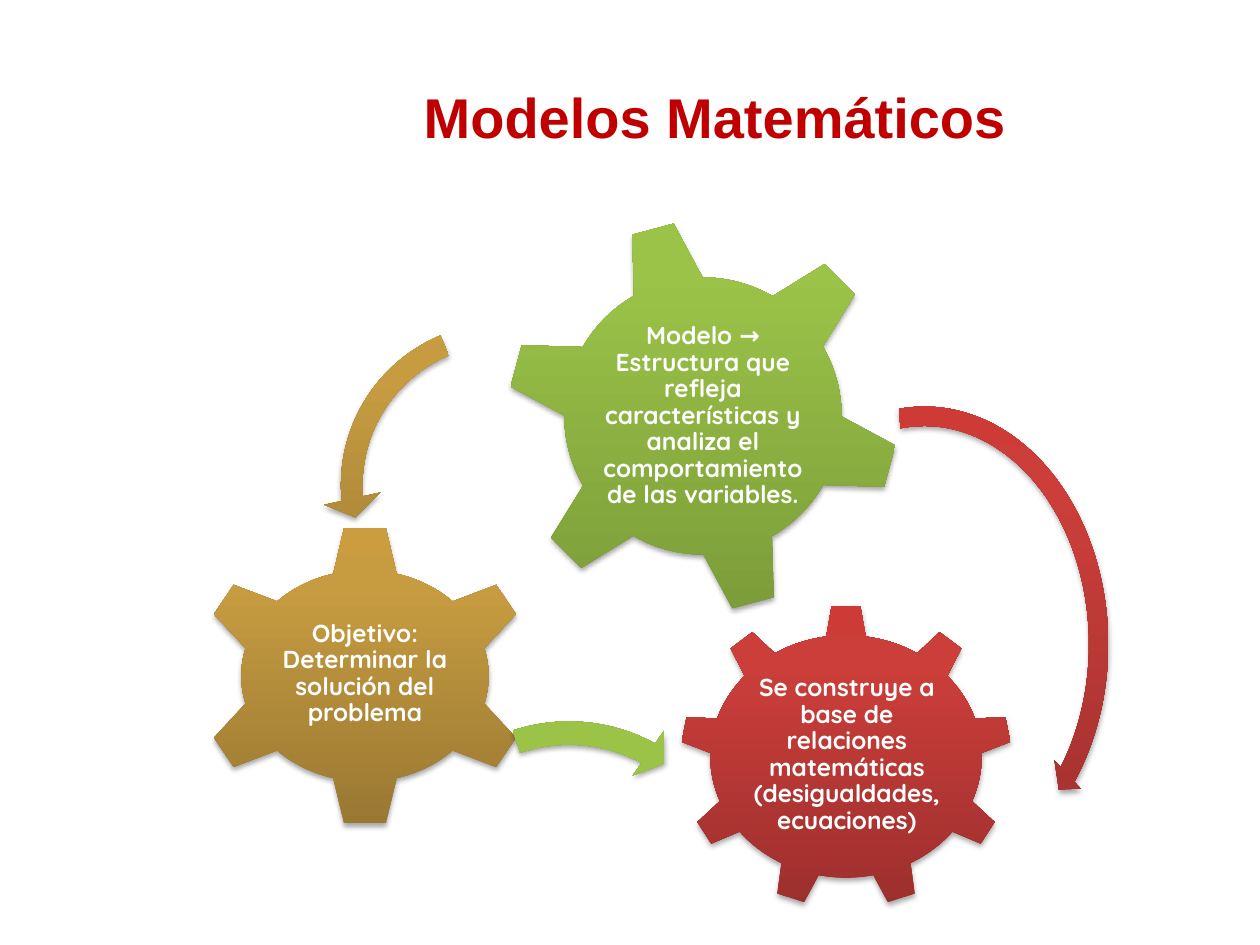
from dataclasses import dataclass

from pptx import Presentation
from pptx import util as u
from pptx.dml.color import RGBColor
from pptx.enum import shapes, text
from pptx.oxml import parse_xml
from pptx.oxml.ns import nsdecls

PX = u.Inches(1) // 126
KIND = shapes.MSO_SHAPE
Box = tuple[int, int, int, int]

HEX = {"title": "C00000", "text": "FFFFFF", "shade": "000000"}
TONES = {
    "red": {0: "9C2F2D", 80: "CB3E3A", 100: "CE3B37"},
    "gold": {0: "997832", 80: "C79C41", 100: "CB9D3F"},
    "green": {0: "779737", 80: "9BC348", 100: "9DC746"},
}


@dataclass
class Part:
    kind: KIND
    box: Box
    tone: str
    turn: float = 0
    adj: tuple[float, ...] = ()


@dataclass
class Label:
    words: str
    box: Box
    font: str = "Quicksand"
    size: int = 14
    color: str = "text"
    inset: int = 3
    lines: float = 0.9
    after: int = 5


GEARS = [
    (Part(KIND.GEAR_9, (680, 605, 332, 303), "red"),
     Label("Se construye a base de relaciones matemáticas "
           "(desigualdades, ecuaciones)", (746, 677, 202, 156))),
    (Part(KIND.GEAR_6, (196, 525, 338, 302), "gold"),
     Label("Objetivo: Determinar la solución del problema",
           (277, 600, 176, 148))),
    (Part(KIND.GEAR_6, (505, 218, 396, 396), "green", 345),
     Label("Modelo → Estructura que refleja características y analiza "
           "el comportamiento de las variables.", (592, 305, 222, 223))),
]
ARROWS = [
    Part(KIND.CIRCULAR_ARROW, (731, 397, 387, 495), "red",
         adj=(0.05, 2.99, 25.34, 158.23, 0.05)),
    Part(KIND.LEFT_CIRCULAR_ARROW, (323, 305, 360, 360), "gold",
         adj=(0.06, 4.3, 104.89, 148.38, 0.08)),
    Part(KIND.CIRCULAR_ARROW, (375, 706, 388, 388), "green", 76.5,
         (0.06, 3.94, 133.14, 105.08, 0.07)),
]
TITLE = Label("Modelos Matemáticos", (233, 38, 964, 157), "Arial", 32,
              "title", 12, 1, 0)


def scale(box: Box) -> list[int]:
    return [n * PX for n in box]


def shade(shape, tone: str) -> None:
    """Give the shape a vertical gradient and a soft shadow below."""
    stops = "".join(
        f'<a:gs pos="{pos * 1000}"><a:srgbClr val="{color}"/></a:gs>'
        for pos, color in TONES[tone].items())
    props = shape.element.spPr
    shape.line.fill.background()
    props.insert(2, parse_xml(
        f'<a:gradFill {nsdecls("a")} rotWithShape="0"><a:gsLst>{stops}'
        '</a:gsLst><a:lin ang="16200000" scaled="0"/></a:gradFill>'))
    props.append(parse_xml(
        f'<a:effectLst {nsdecls("a")}><a:outerShdw blurRad="{u.Pt(3.1)}" '
        f'dist="{u.Pt(1.8)}" dir="5400000" rotWithShape="0">'
        f'<a:srgbClr val="{HEX["shade"]}"><a:alpha val="35000"/></a:srgbClr>'
        '</a:outerShdw></a:effectLst>'))


def draw(slide, part: Part) -> None:
    shape = slide.shapes.add_shape(part.kind, *scale(part.box))
    shape.rotation = part.turn
    for i, value in enumerate(part.adj):
        shape.adjustments[i] = value
    shade(shape, part.tone)


def write(slide, label: Label) -> None:
    frame = slide.shapes.add_textbox(*scale(label.box)).text_frame
    frame.word_wrap = True
    frame.vertical_anchor = text.MSO_ANCHOR.MIDDLE
    frame.margin_left = frame.margin_right = label.inset * PX
    frame.margin_top = frame.margin_bottom = min(label.inset, 6) * PX
    para = frame.paragraphs[0]
    para.alignment = text.PP_ALIGN.CENTER
    para.line_spacing = label.lines
    para.space_after = u.Pt(label.after)
    run = para.add_run()
    run.text = label.words
    font = run.font
    font.name, font.size, font.bold = label.font, u.Pt(label.size), True
    font.color.rgb = RGBColor.from_string(HEX[label.color])


def main() -> None:
    deck = Presentation()
    deck.slide_width, deck.slide_height = u.Inches(10), u.Inches(7.5)
    slide = deck.slides.add_slide(deck.slide_layouts[6])
    write(slide, TITLE)
    for gear, label in GEARS:
        draw(slide, gear)
        write(slide, label)
    for arrow in ARROWS:
        draw(slide, arrow)
    deck.save("out.pptx")


if __name__ == "__main__":
    main()
